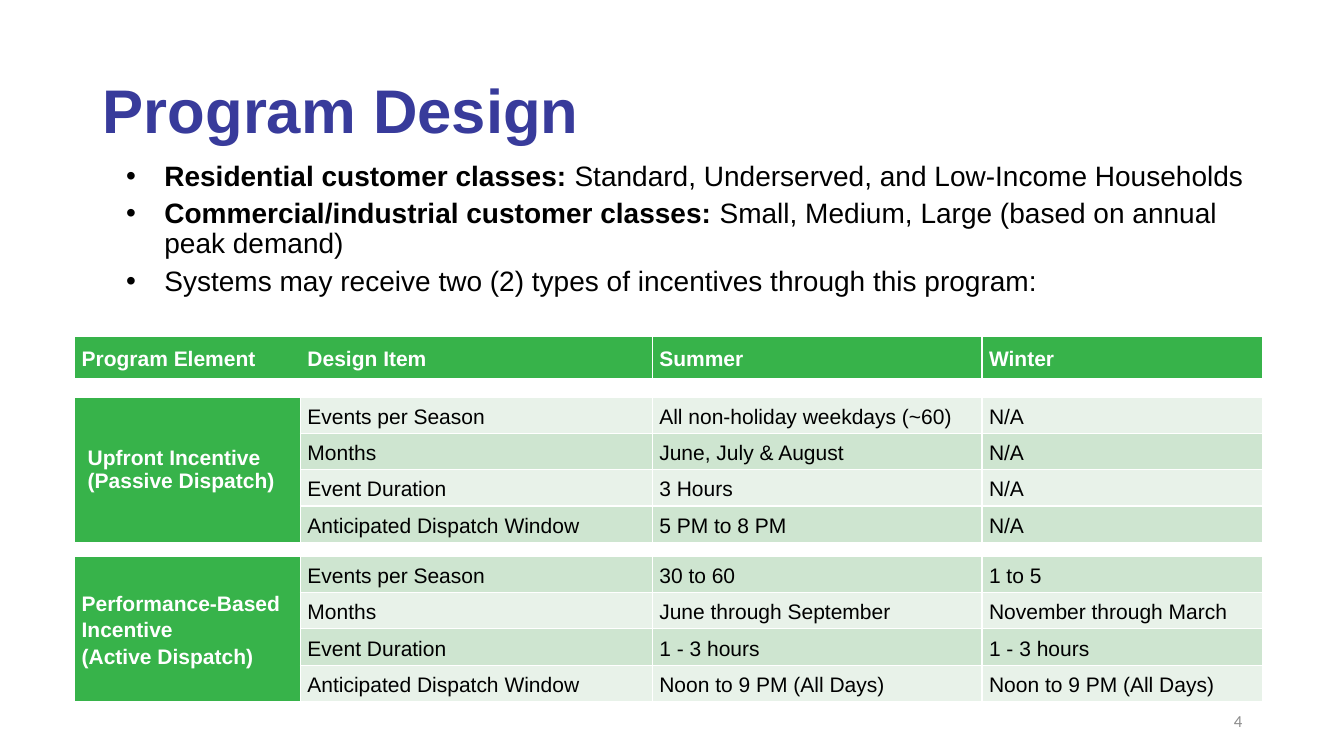
from lxml.etree import SubElement
from pptx import Presentation
from pptx.dml.color import RGBColor
from pptx.enum.text import MSO_ANCHOR, MSO_AUTO_SIZE, PP_ALIGN
from pptx.oxml.ns import qn
from pptx.util import Inches, Pt

COLORS = {"title": "383B9B", "text": "000000", "white": "FFFFFF", "number": "8C8C8C",
          "green": "37B34A", "light": "E8F2E9", "medium": "CEE5D0"}
BULLETS = [
    ("Residential customer classes: ", "Standard, Underserved, and Low-Income Households"),
    ("Commercial/industrial customer classes: ",
     "Small, Medium, Large (based on annual peak demand)"),
    ("", "Systems may receive two (2) types of incentives through this program:"),
]
HEADERS = ["Program Element", "Design Item", "Summer", "Winter"]
DESIGN_ITEMS = ["Events per Season", "Months", "Event Duration", "Anticipated Dispatch Window"]
COLUMN_WIDTHS = [2.24, 3.49, 3.27, 2.78]
HEADER_HEIGHT, ITEM_HEIGHT = 0.42, 0.36
PROGRAMS = [
    {"name": ["Upfront Incentive", "(Passive Dispatch)"], "gap": 0.18,
     "bands": ["light", "medium"],
     "name_format": {"margins": (0.13, 0.07), "spacing": 1.0, "align": PP_ALIGN.LEFT},
     "summer": ["All non-holiday weekdays (~60)", "June, July & August", "3 Hours", "5 PM to 8 PM"],
     "winter": ["N/A"] * len(DESIGN_ITEMS)},
    {"name": ["Performance-Based Incentive", "(Active Dispatch)"], "gap": 0.14,
     "bands": ["medium", "light"], "name_format": {"align": PP_ALIGN.JUSTIFY},
     "summer": ["30 to 60", "June through September", "1 - 3 hours", "Noon to 9 PM (All Days)"],
     "winter": ["1 to 5", "November through March", "1 - 3 hours", "Noon to 9 PM (All Days)"]},
]


def set_attributes(target, values):
    """Set every named attribute on the target."""
    for name, value in values.items():
        setattr(target, name, value)


class SlideBuilder:
    """Holds the style and the current slide."""

    def __init__(self, presentation, font="Arial"):
        """Add a title and content slide."""
        self.font = font
        self.slide = presentation.slides.add_slide(presentation.slide_layouts[1])

    def place(self, shape, left, top, width, height, anchor):
        """Position a shape and prepare its text frame."""
        set_attributes(shape, {"left": Inches(left), "top": Inches(top),
                               "width": Inches(width), "height": Inches(height)})
        set_attributes(shape.text_frame, {"word_wrap": True, "vertical_anchor": anchor,
                                          "auto_size": MSO_AUTO_SIZE.NONE})

    def run(self, paragraph, text, size, color, bold=False, font=None):
        """Add a formatted run."""
        run = paragraph.add_run()
        run.text = text
        set_attributes(run.font, {"name": font or self.font, "size": Pt(size), "bold": bold})
        run.font.color.rgb = RGBColor.from_string(COLORS[color])

    def title(self, text):
        """Fill the title placeholder."""
        shape = self.slide.shapes.title
        self.place(shape, 0.92, 0.4, 11.5, 1.45, MSO_ANCHOR.MIDDLE)
        paragraph = shape.text_frame.paragraphs[0]
        set_attributes(paragraph, {"alignment": PP_ALIGN.LEFT, "line_spacing": 0.9})
        self.run(paragraph, text, 44, "title", True)

    def bullets(self, items):
        """Fill the body placeholder with a bulleted list."""
        shape = self.slide.placeholders[1]
        self.place(shape, 0.82, 1.56, 12, 2.19, MSO_ANCHOR.TOP)
        frame = shape.text_frame
        for index, (lead, detail) in enumerate(items):
            paragraph = frame.add_paragraph() if index else frame.paragraphs[0]
            set_attributes(paragraph, {"level": 1, "line_spacing": 0.9, "space_before": Pt(5)})
            properties = paragraph._p.get_or_add_pPr()
            properties.set("marL", str(Inches(0.71)))
            properties.set("indent", str(Inches(-0.38)))
            SubElement(properties, qn("a:buFont"), typeface="Arial")
            SubElement(properties, qn("a:buChar"), char="•")
            if lead:
                self.run(paragraph, lead, 20, "text", True)
            self.run(paragraph, detail, 20, "text")

    def slide_number(self, text):
        """Add the slide number."""
        shape = self.slide.shapes.add_textbox(0, 0, 0, 0)
        self.place(shape, 9.42, 6.95, 3, 0.4, MSO_ANCHOR.MIDDLE)
        paragraph = shape.text_frame.paragraphs[0]
        paragraph.alignment = PP_ALIGN.RIGHT
        self.run(paragraph, text, 12, "number", font="Calibri")

    def table(self, left, top, widths, heights):
        """Add an unbanded table with the given column widths and row heights."""
        frame = self.slide.shapes.add_table(len(heights), len(widths), Inches(left), Inches(top),
                                            Inches(sum(widths)), Inches(sum(heights)))
        table = frame.table
        set_attributes(table, {"first_row": False, "horz_banding": False})
        for column, width in zip(table.columns, widths):
            column.width = Inches(width)
        for row, height in zip(table.rows, heights):
            row.height = Inches(height)
        return table

    def cell(self, cell, lines, fill, color="text", bold=False, align=PP_ALIGN.LEFT,
             margins=(0.07, 0), spacing=1.15, hidden_sides=""):
        """Format one cell and write its lines."""
        horizontal, vertical = map(Inches, margins)
        set_attributes(cell, {"margin_left": horizontal, "margin_right": horizontal,
                              "margin_top": vertical, "margin_bottom": vertical,
                              "vertical_anchor": MSO_ANCHOR.MIDDLE})
        self.borders(cell, hidden_sides)
        cell.fill.solid()
        cell.fill.fore_color.rgb = RGBColor.from_string(COLORS[fill])
        for index, line in enumerate(lines):
            frame = cell.text_frame
            paragraph = frame.add_paragraph() if index else frame.paragraphs[0]
            set_attributes(paragraph, {"alignment": align, "line_spacing": spacing})
            self.run(paragraph, line, 15, color, bold)

    def borders(self, cell, hidden_sides):
        """Draw white cell borders except on the hidden sides."""
        properties = cell._tc.get_or_add_tcPr()
        for side in "LRTB":
            line = SubElement(properties, qn(f"a:ln{side}"), w=str(Pt(1)))
            if side in hidden_sides:
                SubElement(line, qn("a:noFill"))
            else:
                fill = SubElement(line, qn("a:solidFill"))
                SubElement(fill, qn("a:srgbClr"), val=COLORS["white"])

    def gap_row(self, table, row):
        """Merge a row into a thin white gap."""
        last = len(table.columns) - 1
        table.cell(row, 0).merge(table.cell(row, last))
        for column in range(last + 1):
            cell = table.cell(row, column)
            self.cell(cell, [], "white", margins=(0, 0))
            cell.text_frame.paragraphs[0].font.size = Pt(1)

    def program(self, table, first_row, program):
        """Fill the rows of one incentive program."""
        last_row = first_row + len(DESIGN_ITEMS) - 1
        table.cell(first_row, 0).merge(table.cell(last_row, 0))
        rows = zip(DESIGN_ITEMS, program["summer"], program["winter"])
        for offset, texts in enumerate(rows):
            row = first_row + offset
            self.cell(table.cell(row, 0), [] if offset else program["name"], "green",
                      "white", True, **program["name_format"])
            for column, text in enumerate(texts, 1):
                align = PP_ALIGN.JUSTIFY if column == 1 else PP_ALIGN.LEFT
                self.cell(table.cell(row, column), [text], program["bands"][offset % 2],
                          align=align)


def main():
    """Build and save the program design slide."""
    presentation = Presentation()
    set_attributes(presentation, {"slide_width": Inches(13.33), "slide_height": Inches(7.5)})
    builder = SlideBuilder(presentation)
    builder.title("Program Design")
    builder.bullets(BULLETS)
    builder.slide_number("4")
    heights = [HEADER_HEIGHT]
    for program in PROGRAMS:
        heights += [program["gap"]] + [ITEM_HEIGHT] * len(DESIGN_ITEMS)
    table = builder.table(0.74, 3.34, COLUMN_WIDTHS, heights)
    hidden_sides = {0: "LRTB", 1: "L"}
    for column, header in enumerate(HEADERS):
        builder.cell(table.cell(0, column), [header], "green", "white", True,
                     PP_ALIGN.JUSTIFY, hidden_sides=hidden_sides.get(column, ""))
    for index, program in enumerate(PROGRAMS):
        gap_row = 1 + index * (len(DESIGN_ITEMS) + 1)
        builder.gap_row(table, gap_row)
        builder.program(table, gap_row + 1, program)
    presentation.save("out.pptx")


if __name__ == "__main__":
    main()
